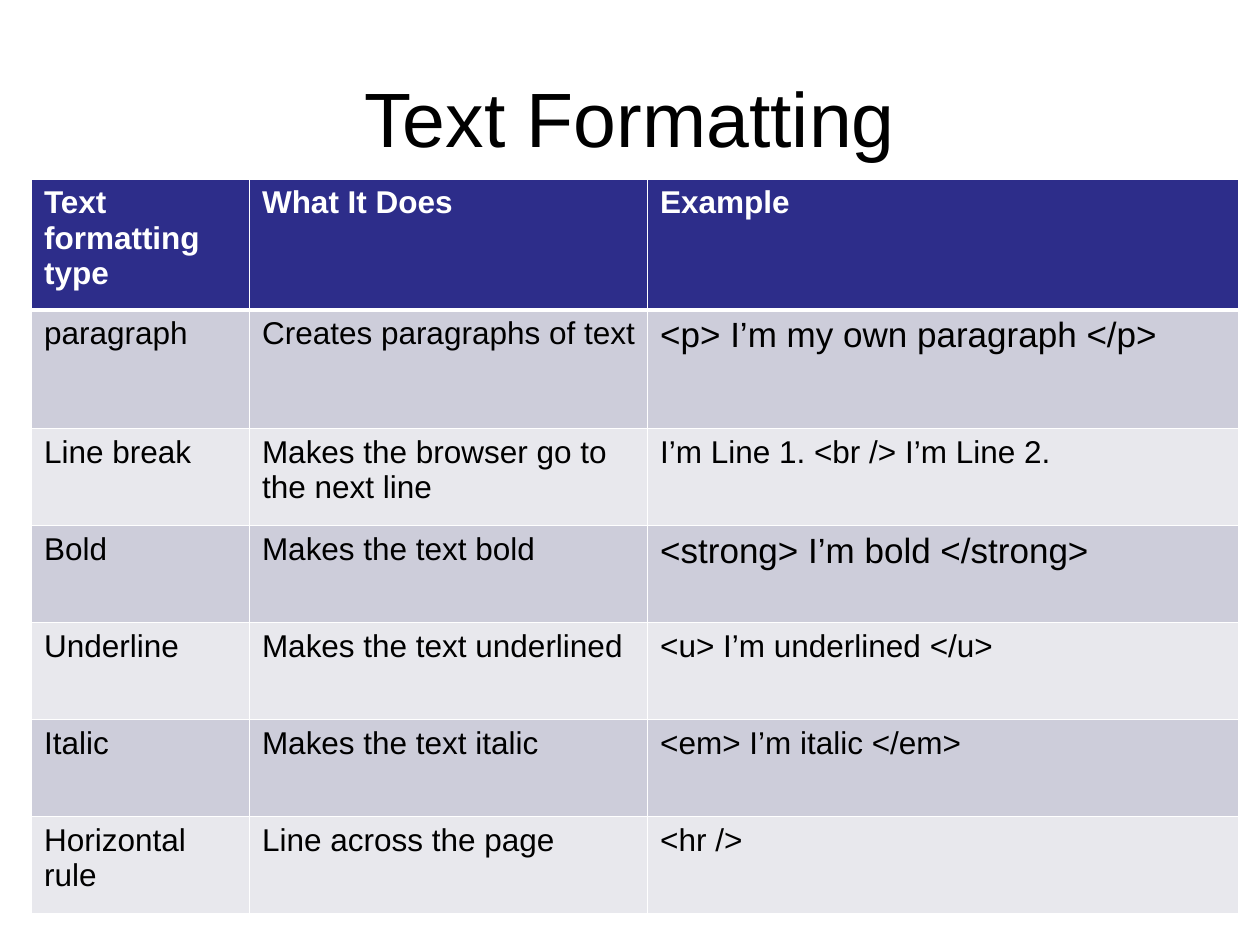
from typing import NamedTuple

from lxml.etree import SubElement
from pptx import Presentation
from pptx.dml.color import RGBColor
from pptx.enum.text import MSO_ANCHOR, PP_ALIGN
from pptx.oxml.ns import qn
from pptx.util import Inches, Pt

FONT = "Arial"
WHITE, BLACK, NAVY = "FFFFFF", "000000", "2D2D8A"
BANDS = ("CDCDDA", "E8E8ED")
COLS = (1.73, 3.16, 4.69)
HEADER_H, FIRST_H, ROW_H = 1.04, 0.94, 0.77


class Format(NamedTuple):
    kind: str
    effect: str
    example: str
    sub_level: bool = False  # example set one level down, in larger type


HEADER = Format("Text formatting type", "What It Does", "Example")
FORMATS = (
    Format("paragraph", "Creates paragraphs of text", "<p> I’m my own paragraph </p>", True),
    Format("Line break", "Makes the browser go to the next line", "I’m Line 1. <br /> I’m Line 2."),
    Format("Bold", "Makes the text bold", "<strong> I’m bold </strong>", True),
    Format("Underline", "Makes the text underlined", "<u> I’m underlined </u>"),
    Format("Italic", "Makes the text italic", "<em> I’m italic </em>"),
    Format("Horizontal rule", "Line across the page", "<hr />"),
)


def rgb(value: str) -> RGBColor:
    return RGBColor.from_string(value)


def add_run(p, text: str, size: float, color: str, bold: bool = False) -> None:
    r = p.add_run()
    r.text = text
    r.font.name, r.font.size, r.font.bold = FONT, Pt(size), bold
    r.font.color.rgb = rgb(color)


def set_borders(cell, top: float, bottom: float) -> None:
    """Draw white borders; they must precede the fill in the cell's XML."""
    tc_pr = cell._tc.get_or_add_tcPr()
    for side, width in (("L", 1), ("R", 1), ("T", top), ("B", bottom)):
        ln = SubElement(tc_pr, qn(f"a:ln{side}"), w=str(Pt(width)))
        SubElement(SubElement(ln, qn("a:solidFill")), qn("a:srgbClr"), val=WHITE)


def fill_row(table, i: int, row: Format) -> None:
    header = i == 0
    for j, text in enumerate((row.kind, row.effect, row.example)):
        cell = table.cell(i, j)
        set_borders(cell, 3 if i == 1 else 1, 3 if header else 1)
        cell.fill.solid()
        cell.fill.fore_color.rgb = rgb(NAVY if header else BANDS[(i - 1) % 2])
        p = cell.text_frame.paragraphs[0]
        lower = row.sub_level and j == 2
        if lower:
            p.level = 1
            p._p.get_or_add_pPr().set("marL", "0")
        add_run(p, text, 20 if lower else 18, WHITE if header else BLACK, header)


def add_title(s, text: str) -> None:
    sp = s.shapes.title
    sp.left, sp.top, sp.width, sp.height = map(Inches, (0.5, 0.3, 9, 1.25))
    tf = sp.text_frame
    tf.vertical_anchor = MSO_ANCHOR.MIDDLE
    p = tf.paragraphs[0]
    p.alignment = PP_ALIGN.CENTER
    add_run(p, text, 44, BLACK)


def add_format_table(s) -> None:
    rows = (HEADER, *FORMATS)
    heights = [HEADER_H, FIRST_H] + [ROW_H] * (len(rows) - 2)
    box = map(Inches, (0.25, 1.42, sum(COLS), sum(heights)))
    table = s.shapes.add_table(len(rows), len(COLS), *box).table
    for col, width in zip(table.columns, COLS):
        col.width = Inches(width)
    for i, (row, height) in enumerate(zip(rows, heights)):
        table.rows[i].height = Inches(height)
        fill_row(table, i, row)


def main() -> None:
    prs = Presentation()
    prs.slide_width, prs.slide_height = Inches(10), Inches(7.5)
    s = prs.slides.add_slide(prs.slide_layouts[5])
    add_title(s, "Text Formatting")
    add_format_table(s)
    prs.save("out.pptx")


if __name__ == "__main__":
    main()
